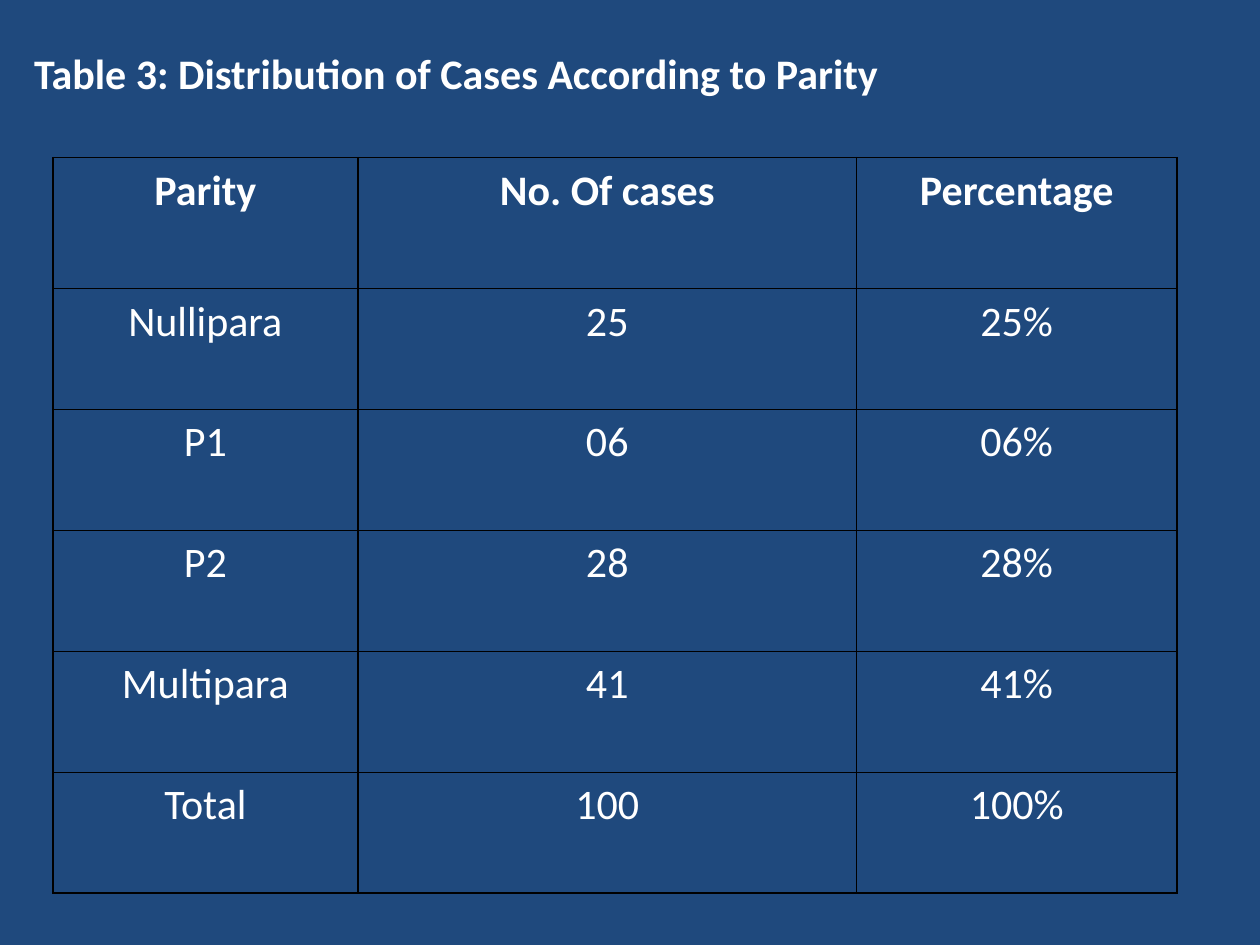
from dataclasses import dataclass

from lxml import etree
from pptx import Presentation
from pptx import util as u
from pptx.dml.color import RGBColor
from pptx.enum import text
from pptx.oxml import ns


@dataclass(frozen=True)
class Theme:
    background: RGBColor = RGBColor(0x1F, 0x49, 0x7D)
    ink: RGBColor = RGBColor(0xFF, 0xFF, 0xFF)
    border: RGBColor = RGBColor(0, 0, 0)
    border_width: u.Length = u.Pt(1)
    font: str = "Calibri"
    size: u.Length = u.Pt(24)
    line_spacing: float = 1.15


@dataclass(frozen=True)
class ParityRow:
    parity: str
    cases: str
    percentage: str
    height: float = 0.96
    bold: bool = False


THEME = Theme()
TITLE = "Table 3: Distribution of Cases According to Parity"
COLUMN_WIDTHS = (2.42, 3.96, 2.54)
ROWS = (
    ParityRow("Parity", "No. Of cases", "Percentage", height=1.04, bold=True),
    ParityRow("Nullipara", "25", "25%"),
    ParityRow("P1", "06", "06%"),
    ParityRow("P2", "28", "28%"),
    ParityRow("Multipara", "41", "41%"),
    ParityRow("Total", "100", "100%"),
)


def format_paragraph(paragraph, alignment, bold: bool) -> None:
    paragraph.alignment = alignment
    for run in paragraph.runs:
        run.font.name = THEME.font
        run.font.size = THEME.size
        run.font.bold = bold
        run.font.color.rgb = THEME.ink


def add_borders(cell) -> None:
    """Draw all four sides; border elements must precede the cell's fill."""
    properties = cell._tc.get_or_add_tcPr()
    for index, side in enumerate(("lnL", "lnR", "lnT", "lnB")):
        line = etree.Element(ns.qn(f"a:{side}"), w=str(THEME.border_width))
        fill = etree.SubElement(line, ns.qn("a:solidFill"))
        etree.SubElement(fill, ns.qn("a:srgbClr"), val=str(THEME.border))
        properties.insert(index, line)


def fill_cell(cell, content: str, bold: bool) -> None:
    cell.fill.background()
    cell.margin_left = cell.margin_right = u.Inches(0.07)
    cell.margin_top = cell.margin_bottom = 0
    cell.vertical_anchor = text.MSO_ANCHOR.TOP
    cell.text_frame.text = content
    paragraph = cell.text_frame.paragraphs[0]
    paragraph.line_spacing = THEME.line_spacing
    format_paragraph(paragraph, text.PP_ALIGN.CENTER, bold)
    add_borders(cell)


def set_title(slide) -> None:
    title = slide.shapes.title
    title.left, title.top = u.Inches(0.17), u.Inches(0.33)
    title.width, title.height = u.Inches(7.5), u.Inches(1.38)
    frame = title.text_frame
    frame.text = TITLE
    frame.word_wrap = True
    frame.auto_size = text.MSO_AUTO_SIZE.NONE
    frame.vertical_anchor = text.MSO_ANCHOR.TOP
    format_paragraph(frame.paragraphs[0], text.PP_ALIGN.LEFT, bold=True)


def add_parity_table(slide) -> None:
    table = slide.shapes.add_table(
        len(ROWS), len(COLUMN_WIDTHS), u.Inches(0.42), u.Inches(1.25),
        u.Inches(sum(COLUMN_WIDTHS)), u.Inches(sum(row.height for row in ROWS)),
    ).table
    table.first_row = table.horz_banding = False
    for column, width in zip(table.columns, COLUMN_WIDTHS):
        column.width = u.Inches(width)
    for table_row, row in zip(table.rows, ROWS):
        table_row.height = u.Inches(row.height)
        contents = (row.parity, row.cases, row.percentage)
        for cell, content in zip(table_row.cells, contents):
            fill_cell(cell, content, row.bold)


def main() -> None:
    presentation = Presentation()
    presentation.slide_width, presentation.slide_height = u.Inches(10), u.Inches(7.5)
    title_only = presentation.slide_layouts[5]
    slide = presentation.slides.add_slide(title_only)
    slide.background.fill.solid()
    slide.background.fill.fore_color.rgb = THEME.background
    set_title(slide)
    add_parity_table(slide)
    presentation.save("out.pptx")


if __name__ == "__main__":
    main()
